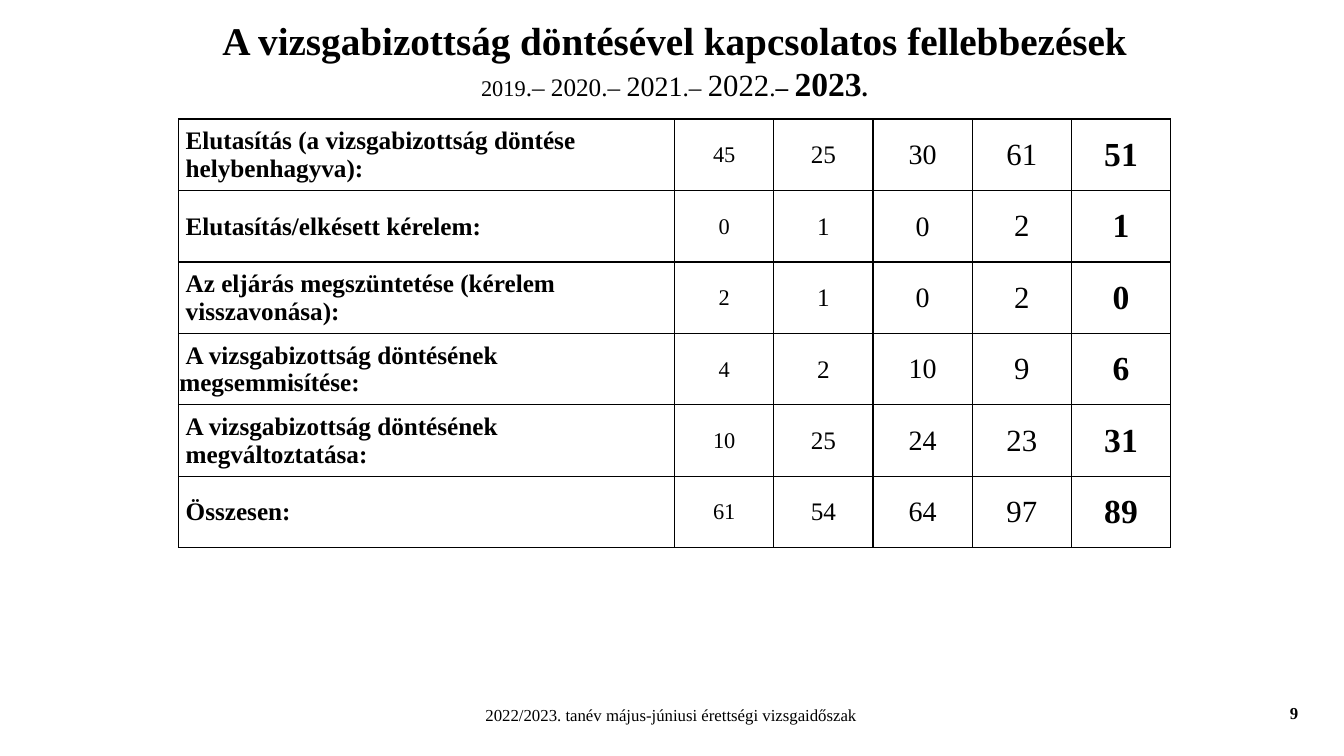
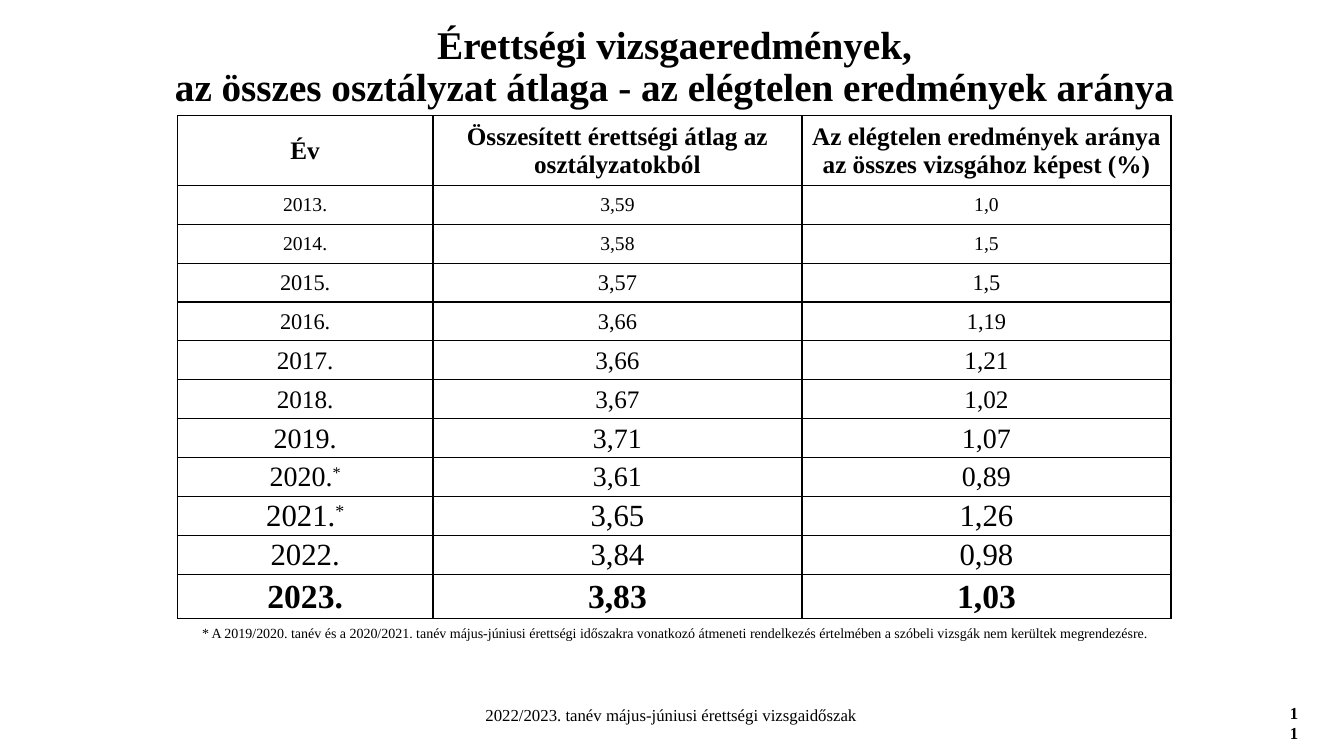
from dataclasses import dataclass
from typing import NamedTuple

from lxml.etree import SubElement
from pptx import Presentation
from pptx.dml.color import RGBColor
from pptx.enum.text import MSO_ANCHOR as Anchor, MSO_AUTO_SIZE as AutoSize, PP_ALIGN as Align
from pptx.oxml.ns import qn
from pptx.util import Cm, Pt

BLACK = RGBColor(0x00, 0x00, 0x00)
FONT = "Times New Roman"
FOOTER = "2022/2023. tanév május-júniusi érettségi vizsgaidőszak"
TITLE_SIZE = 28
LABEL_SIZE = 18
LABEL_INDENT = Cm(0.16)
BORDER = Pt(1)


class Run(NamedTuple):
    text: str
    size: float
    bold: bool = False
    raised: bool = False


class Box(NamedTuple):
    left: float
    top: float
    width: float
    height: float


@dataclass
class Line:
    runs: list[Run]
    align: Align = Align.CENTER
    spacing: float = 1.0
    left: int = 0
    first: int = 0


@dataclass
class Grid:
    left: float
    top: float
    widths: list[float]
    heights: list[float]
    cells: list[list[list[Line]]]


NUMBER_BOX = Box(32.26, 17.58, 0.74, 0.76)
FOOTER_BOX = Box(9.12, 17.63, 15.6, 0.76)
NOTE_BOX = Box(2, 15.62, 30, 0.69)


def write(tf, lines: list[Line]) -> None:
    for i, line in enumerate(lines):
        p = tf.paragraphs[0] if i == 0 else tf.add_paragraph()
        p.alignment = line.align
        p.line_spacing = line.spacing
        if line.left or line.first:
            pPr = p._p.get_or_add_pPr()
            pPr.set("marL", str(line.left))
            pPr.set("indent", str(line.first))
        for run in line.runs:
            r = p.add_run()
            r.text = run.text
            style = {"name": FONT, "size": Pt(run.size), "bold": run.bold}
            for name, value in style.items():
                setattr(r.font, name, value)
            r.font.color.rgb = BLACK
            if run.raised:
                r._r.get_or_add_rPr().set("baseline", "30000")


def add_text(s, box: Box, line: Line) -> None:
    tf = s.shapes.add_textbox(*map(Cm, box)).text_frame
    tf.word_wrap = True
    tf.auto_size = AutoSize.SHAPE_TO_FIT_TEXT
    write(tf, [line])


def add_page(prs, number: int, title: list[Line], height: float, anchor: Anchor):
    s = prs.slides.add_slide(prs.slide_layouts[5])
    sp = s.shapes.title
    place = {"left": Cm(2), "top": Cm(0.51), "width": Cm(30), "height": Cm(height)}
    for name, value in place.items():
        setattr(sp, name, value)
    tf = sp.text_frame
    tf.auto_size = AutoSize.NONE
    tf.vertical_anchor = anchor
    write(tf, title)
    add_text(s, NUMBER_BOX, Line([Run(str(number), 12, True)], Align.LEFT))
    add_text(s, FOOTER_BOX, Line([Run(FOOTER, 12)]))
    return s


def add_borders(cell) -> None:
    tcPr = cell._tc.get_or_add_tcPr()
    for side in ("lnL", "lnR", "lnT", "lnB"):
        ln = SubElement(tcPr, qn(f"a:{side}"), w=str(BORDER))
        fill = SubElement(ln, qn("a:solidFill"))
        SubElement(fill, qn("a:srgbClr"), val=str(BLACK))


def add_grid(s, grid: Grid) -> None:
    box = Box(grid.left, grid.top, sum(grid.widths), sum(grid.heights))
    table = s.shapes.add_table(
        len(grid.heights), len(grid.widths), *map(Cm, box)
    ).table
    table.first_row = table.horz_banding = False
    for column, width in zip(table.columns, grid.widths):
        column.width = Cm(width)
    for row, height, contents in zip(table.rows, grid.heights, grid.cells):
        row.height = Cm(height)
        for cell, lines in zip(row.cells, contents):
            style = {
                "margin_left": Cm(0.02),
                "margin_right": Cm(0.02),
                "margin_top": Cm(0.02),
                "margin_bottom": 0,
                "vertical_anchor": Anchor.MIDDLE,
            }
            for name, value in style.items():
                setattr(cell, name, value)
            add_borders(cell)
            cell.fill.background()
            write(cell.text_frame, lines)


def label(*texts: str, left: int = LABEL_INDENT, first: int = 0) -> list[Line]:
    return [
        Line([Run(text, LABEL_SIZE, True)], Align.LEFT, left=left, first=first)
        for text in texts
    ]


APPEAL_SIZES = [16, 18, 20, 22, 24]
APPEALS = [
    (label("Elutasítás (a vizsgabizottság döntése", "helybenhagyva):"), [45, 25, 30, 61, 51]),
    (label("Elutasítás/elkésett kérelem:"), [0, 1, 0, 2, 1]),
    (label("Az eljárás megszüntetése (kérelem", "visszavonása):"), [2, 1, 0, 2, 0]),
    (
        label("A vizsgabizottság döntésének megsemmisítése:", left=0, first=LABEL_INDENT),
        [4, 2, 10, 9, 6],
    ),
    (label("A vizsgabizottság döntésének", "megváltoztatása:"), [10, 25, 24, 23, 31]),
    (label("Összesen:"), [61, 54, 64, 97, 89]),
]

RESULT_HEADS = [
    "Év",
    "Összesített érettségi átlag az osztályzatokból",
    "Az elégtelen eredmények aránya az összes vizsgához képest (%)",
]
RESULTS = [
    ("2013.", "3,59", "1,0", 14),
    ("2014.", "3,58", "1,5", 14),
    ("2015.", "3,57", "1,5", 16),
    ("2016.", "3,66", "1,19", 16),
    ("2017.", "3,66", "1,21", 18),
    ("2018.", "3,67", "1,02", 18),
    ("2019.", "3,71", "1,07", 20),
    ("2020.*", "3,61", "0,89", 20),
    ("2021.*", "3,65", "1,26", 22),
    ("2022.", "3,84", "0,98", 22),
    ("2023.", "3,83", "1,03", 24),
]


def appeals_slide(prs) -> None:
    years = [
        Run("2019", 16), Run(".– 2020.– ", 18), Run("2021", 20), Run(".– ", 18),
        Run("2022", 22), Run(".", 18), Run("– ", 18, True), Run("2023", 24, True),
        Run(".", 18, True),
    ]
    heading = Run("A vizsgabizottság döntésével kapcsolatos fellebbezések", TITLE_SIZE, True)
    s = add_page(prs, 9, [Line([heading]), Line(years)], 2, Anchor.MIDDLE)
    cells = [
        [name] + [
            [Line([Run(str(count), size, size == APPEAL_SIZES[-1])])]
            for count, size in zip(counts, APPEAL_SIZES)
        ]
        for name, counts in APPEALS
    ]
    add_grid(s, Grid(4.5, 3, [12.5] + [2.5] * 5, [1.8] * len(cells), cells))


def results_slide(prs) -> None:
    title = [
        Line([Run(text, TITLE_SIZE, True)], spacing=0.9)
        for text in (
            "Érettségi vizsgaeredmények,",
            "az összes osztályzat átlaga - az elégtelen eredmények aránya",
        )
    ]
    s = add_page(prs, 11, title, 1.5, Anchor.TOP)
    cells = [[[Line([Run(head, LABEL_SIZE, True)])] for head in RESULT_HEADS]]
    for *texts, size in RESULTS:
        bold = texts[0] == RESULTS[-1][0]
        row = []
        for text in texts:
            runs = [Run(text.rstrip("*"), size, bold)]
            if text.endswith("*"):
                runs.append(Run("*", size, raised=True))
            row.append([Line(runs)])
        cells.append(row)
    heights = [1.75] + [0.98] * (len(RESULTS) - 1) + [1.12]
    add_grid(s, Grid(4.47, 2.92, [6.44, 9.3, 9.3], heights, cells))
    note = (
        "* A 2019/2020. tanév és a 2020/2021. tanév május-júniusi érettségi időszakra "
        "vonatkozó átmeneti rendelkezés értelmében a szóbeli vizsgák nem kerültek megrendezésre."
    )
    add_text(s, NOTE_BOX, Line([Run(note, 10)]))


def main() -> None:
    prs = Presentation()
    prs.slide_width = Cm(33.87)
    prs.slide_height = Cm(19.05)
    appeals_slide(prs)
    results_slide(prs)
    prs.save("out.pptx")


if __name__ == "__main__":
    main()
